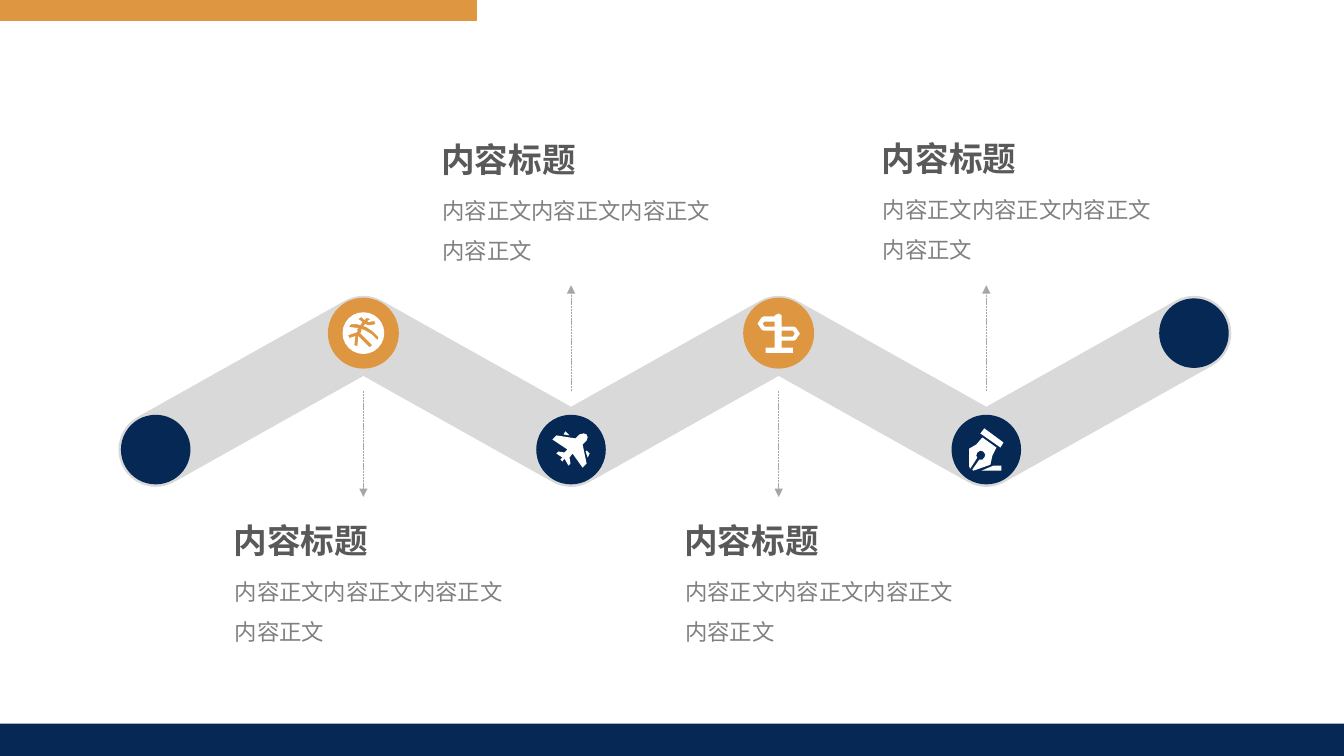
from math import atan2, cos, pi, sin, tau

from lxml.etree import SubElement
from pptx import Presentation
from pptx.dml.color import RGBColor
from pptx.enum.dml import MSO_LINE
from pptx.enum.shapes import MSO_CONNECTOR, MSO_SHAPE
from pptx.enum.text import MSO_AUTO_SIZE
from pptx.oxml.ns import qn
from pptx.util import Emu, Inches, Pt

COLORS = {
    "navy": "062855", "orange": "DE9640", "band": "D9D9D9", "white": "FFFFFF",
    "heading": "595959", "body": "808080", "arrow": "A6A6A6",
}
FONT = "Noto Sans CJK SC"
COLUMNS, ROWS = 133.33, 75

NODES = [(15.45 + 20.6 * i, 33.05 if i % 2 else 44.6) for i in range(6)]
NODE_SIZE = 6.9
BAND_RADIUS = 3.7
CAPTIONS = [(22.2, 51.1), (42.8, 13.3), (66.9, 51.1), (86.5, 13.2)]


def arc(center, radius, start, sweep, steps=24):
    return [(center[0] + radius * cos(start + sweep * i / steps),
             center[1] + radius * sin(start + sweep * i / steps))
            for i in range(steps + 1)]


def band_outline(nodes, radius):
    """Outline of a thick zigzag: round outer corners, sharp inner ones."""
    loop = nodes + nodes[-2:0:-1]
    outline = []
    for i, (x, y) in enumerate(loop):
        before, after = loop[i - 1], loop[(i + 1) % len(loop)]
        heading = atan2(y - before[1], x - before[0])
        turn = (atan2(after[1] - y, after[0] - x) - heading + 2) % tau - 2
        normal = heading - pi / 2
        if turn > 0:
            outline += arc((x, y), radius, normal, turn)
        else:
            outline += arc((x, y), radius / cos(turn / 2), normal + turn / 2, 0, 1)[:1]
    return outline


# Icon outlines, in tenths of a grid cell
GLOBE = [
    arc((21, 21), 20.7, 0, tau),
    [(9, 12), (7, 14), (7, 15), (16, 16), (15, 17), (15, 20), (6, 23), (7, 26),
     (13, 24), (12, 33), (15, 34), (16, 24), (22, 30), (27, 35), (30, 33),
     (24, 27), (18, 21), (19, 19), (19, 17), (22, 18), (29, 22), (35, 28),
     (36, 25), (30, 19), (24, 15), (21, 14), (23, 12), (25, 13), (29, 13),
     (33, 12), (32, 9), (26, 10), (25, 9), (28, 7), (24, 6), (22, 8), (19, 5),
     (16, 7), (20, 10), (18, 13), (14, 12)],
]
PLANE = [
    [(34, 3), (35, 6), (34, 9), (30, 13), (34, 32), (30, 36), (20, 22), (17, 26),
     (18, 32), (16, 34), (12, 27), (10, 30), (8, 28), (10, 26), (4, 22), (6, 20),
     (12, 21), (15, 18), (0, 8), (4, 4), (23, 7), (27, 3), (31, 2)],
    [(37, 22), (34, 19), (33, 20), (35, 26)],
    [(13, 0), (11, 3), (17, 4)],
]
SIGNPOST = [
    [(17, 8), (7, 8), (5, 10), (7, 13), (17, 13)],
    [(24, 13), (36, 13), (38, 14), (42, 20), (38, 26), (36, 27), (24, 27),
     (24, 34), (35, 34), (35, 39), (8, 39), (8, 34), (17, 34), (17, 17), (6, 17),
     (4, 16), (0, 10), (4, 4), (6, 3), (17, 3), (17, 2), (21, 0), (24, 2)],
    [(35, 17), (24, 17), (24, 23), (35, 23), (37, 20)],
]
PEN = [
    [(1, 40), (0, 38), (0, 20), (7, 16), (13, 9), (27, 19), (23, 27), (21, 36),
     (4, 42), (3, 41), (10, 31), (13, 31), (15, 29), (16, 26), (14, 23),
     (11, 22), (8, 24), (7, 27), (8, 29)],
    [(12, 42), (32, 42), (32, 37), (24, 37)],
    [(31, 19), (34, 14), (15, 0), (11, 5)],
]


class SlideBuilder:
    """Draws styled elements on one slide, placed in grid columns and rows."""

    def __init__(self, presentation):
        self.slide = presentation.slides.add_slide(presentation.slide_layouts[6])
        self.shapes = self.slide.shapes
        self.column = presentation.slide_width / COLUMNS
        self.row = presentation.slide_height / ROWS

    def at(self, x, y):
        return Emu(round(x * self.column)), Emu(round(y * self.row))

    def color(self, name):
        return RGBColor.from_string(COLORS[name])

    def paint(self, shape, fill, outlined=False):
        shape.shadow.inherit = False
        shape.fill.solid()
        shape.fill.fore_color.rgb = self.color(fill)
        if outlined:
            shape.line.color.rgb = self.color(fill)
            shape.line.width = Pt(1)
        else:
            shape.line.fill.background()

    def bar(self, x, y, width, height, fill, outlined=False):
        bar = self.shapes.add_shape(
            MSO_SHAPE.RECTANGLE, *self.at(x, y), *self.at(width, height))
        self.paint(bar, fill, outlined)

    def node(self, x, y, fill, outlined):
        node = self.shapes.add_shape(
            MSO_SHAPE.ROUNDED_RECTANGLE,
            *self.at(x - NODE_SIZE / 2, y - NODE_SIZE / 2),
            *self.at(NODE_SIZE, NODE_SIZE))
        node.adjustments[0] = 0.5
        self.paint(node, fill, outlined)

    def outline(self, contours, fill):
        first, *others = [[self.at(*point) for point in c] for c in contours]
        builder = self.shapes.build_freeform(*first[0])
        builder.add_line_segments(first[1:])
        for contour in others:
            builder.move_to(*contour[0])
            builder.add_line_segments(contour[1:])
        self.paint(builder.convert_to_shape(), fill)

    def icon(self, center, contours):
        """Centre an icon on a node."""
        xs, ys = zip(*[point for contour in contours for point in contour])
        left = center[0] - (min(xs) + max(xs)) / 20
        top = center[1] - (min(ys) + max(ys)) / 20
        self.outline([[(left + x / 10, top + y / 10) for x, y in contour]
                      for contour in contours], "white")

    def arrow(self, x, start, end):
        arrow = self.shapes.add_connector(
            MSO_CONNECTOR.STRAIGHT, *self.at(x, start), *self.at(x, end))
        arrow.line.color.rgb = self.color("arrow")
        arrow.line.width = Pt(0.5)
        arrow.line.dash_style = MSO_LINE.SQUARE_DOT
        properties = arrow._element.spPr
        SubElement(properties.find(qn("a:ln")), qn("a:tailEnd"), type="triangle")
        SubElement(properties, qn("a:effectLst"))

    def text(self, x, y, width, height, lines, size, color, bold=False, spacing=None):
        frame = self.shapes.add_textbox(
            *self.at(x, y), *self.at(width, height)).text_frame
        frame.word_wrap = True
        frame.auto_size = MSO_AUTO_SIZE.SHAPE_TO_FIT_TEXT
        for i, line in enumerate(lines):
            paragraph = frame.add_paragraph() if i else frame.paragraphs[0]
            paragraph.line_spacing = spacing
            run = paragraph.add_run()
            run.text = line
            run.font.size = Pt(size)
            run.font.bold = bold
            run.font.color.rgb = self.color(color)
            run.font.name = FONT
            SubElement(run._r.get_or_add_rPr(), qn("a:ea"), typeface=FONT)

    def caption(self, x, y):
        self.text(x, y, 22.5, 5, ["内容标题"], 24, "heading", bold=True)
        self.text(x + 0.1, y + 4.45, 31.8, 8.6,
                  ["内容正文内容正文内容正文", "内容正文"], 16, "body", spacing=1.5)


def main():
    presentation = Presentation()
    presentation.slide_width, presentation.slide_height = Inches(13.33), Inches(7.5)
    builder = SlideBuilder(presentation)

    builder.outline([band_outline(NODES, BAND_RADIUS)], "band")
    for i, (x, y) in enumerate(NODES):
        highlighted = i in (1, 3)
        builder.node(x, y, "orange" if highlighted else "navy", highlighted)
    for center, icon in zip(NODES[1:], [GLOBE, PLANE, SIGNPOST, PEN]):
        builder.icon(center, icon)
        builder.arrow(center[0], 38.8, 49.3 if center[1] < 38.8 else 28.3)

    builder.bar(0, 0, 47.3, 2, "orange", outlined=True)
    builder.bar(0, 71.8, COLUMNS, 3.2, "navy")
    for corner in CAPTIONS:
        builder.caption(*corner)
    presentation.save("out.pptx")


if __name__ == "__main__":
    main()
